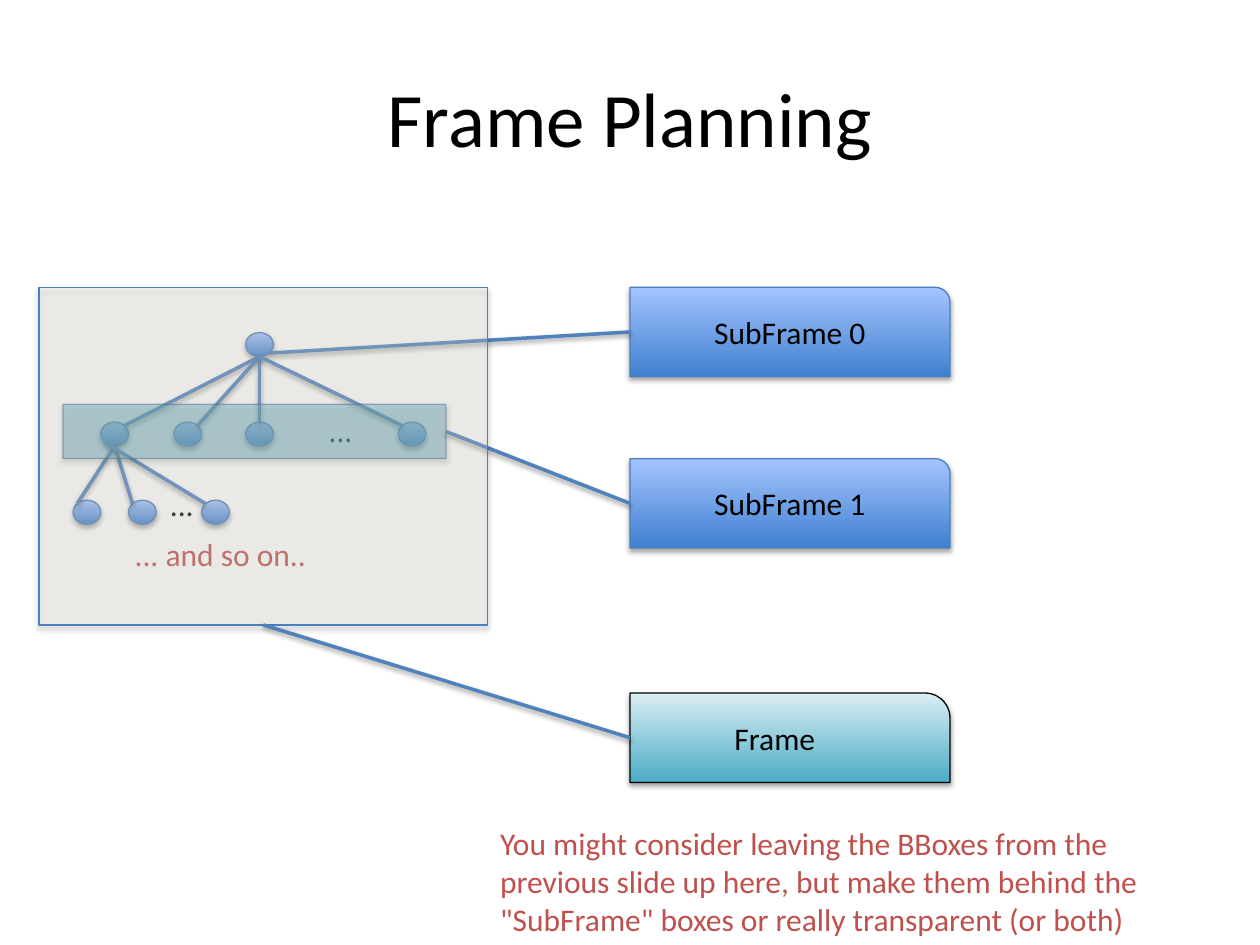
from collections import namedtuple
from math import sqrt

from lxml import etree
from pptx import Presentation
from pptx.dml.color import RGBColor
from pptx.enum.shapes import MSO_CONNECTOR, MSO_SHAPE
from pptx.enum.text import MSO_ANCHOR, MSO_AUTO_SIZE, PP_ALIGN
from pptx.oxml.ns import qn
from pptx.util import Inches, Pt

OVAL = MSO_SHAPE.OVAL
RECTANGLE = MSO_SHAPE.RECTANGLE
ROUND_CORNER = MSO_SHAPE.ROUND_1_RECTANGLE
STRAIGHT = MSO_CONNECTOR.STRAIGHT
MIDDLE = MSO_ANCHOR.MIDDLE
CENTER = PP_ALIGN.CENTER
GROW = MSO_AUTO_SIZE.SHAPE_TO_FIT_TEXT

COLUMNS, ROWS, CELL = 100, 75, 0.1
FONT = "Calibri"
BLACK, RED, EDGE, OUTLINE = "000000", "C0504D", "4F81BD", "4B7EBC"
BLUE_BLEND = ("3F80CE", "A4C4FF")
TEAL_BLEND = ("4BACC6", "DBEEF4")
NODE_WIDTH, NODE_HEIGHT = 2.2, 1.9
DIAGONAL = sqrt(0.5)
TOP, BOTTOM = (0, -1), (0, 1)
TOP_LEFT, TOP_RIGHT = (-DIAGONAL, -DIAGONAL), (DIAGONAL, -DIAGONAL)
BOTTOM_LEFT, BOTTOM_RIGHT = (-DIAGONAL, DIAGONAL), (DIAGONAL, DIAGONAL)

Box = namedtuple("Box", "left top width height")


def cells(*counts):
    return [Inches(count * CELL) for count in counts]


def color(value):
    return RGBColor.from_string(value)


def inside(box, left, top, width, height):
    return Box(box.left + left, box.top + top, width, height)


def site(box, direction):
    across, down = direction
    return (box.left + box.width * (1 + across) / 2,
            box.top + box.height * (1 + down) / 2)


def set_opacity(properties, route, percent):
    tint = properties.find(route + qn("a:solidFill") + "/" + qn("a:srgbClr"))
    etree.SubElement(tint, qn("a:alpha"), val=str(percent * 1000))


def add_shadow(properties, distance, percent):
    effects = etree.SubElement(properties, qn("a:effectLst"))
    shadow = etree.SubElement(effects, qn("a:outerShdw"), blurRad=str(Pt(3.1)),
                              dist=str(Pt(distance)), dir="5400000", rotWithShape="0")
    tint = etree.SubElement(shadow, qn("a:srgbClr"), val=BLACK)
    etree.SubElement(tint, qn("a:alpha"), val=str(percent * 1000))


def add_outlined(slide, kind, box, outline):
    shape = slide.shapes.add_shape(kind, *cells(*box))
    shape.line.color.rgb = color(outline)
    shape.line.width = Pt(0.75)
    return shape


def add_blended(slide, kind, box, blend, outline=OUTLINE):
    shape = add_outlined(slide, kind, box, outline)
    shape.fill.gradient()
    shape.fill.gradient_angle = 90
    for stop, position, tint in zip(shape.fill.gradient_stops, (0, 1), blend):
        stop.position = position
        stop.color.rgb = color(tint)
    add_shadow(shape._element.spPr, 1.8, 35)
    return shape


def add_veil(slide, box, tint, opacity, outline, outline_opacity=100):
    veil = add_outlined(slide, RECTANGLE, box, outline)
    veil.fill.solid()
    veil.fill.fore_color.rgb = color(tint)
    properties = veil._element.spPr
    set_opacity(properties, "", opacity)
    if outline_opacity < 100:
        set_opacity(properties, qn("a:ln") + "/", outline_opacity)
    add_shadow(properties, 1.8, 35)


def add_link(slide, start, end):
    link = slide.shapes.add_connector(STRAIGHT, *cells(*start, *end))
    link.line.color.rgb = color(EDGE)
    link.line.width = Pt(2)
    add_shadow(link._element.spPr, 1.6, 38)


def style(paragraph, size, tint):
    for run in paragraph.runs:
        run.font.name = FONT
        run.font.size = Pt(size)
        run.font.color.rgb = color(tint)


def add_label(slide, box, wording, tint=BLACK):
    frame = slide.shapes.add_textbox(*cells(*box)).text_frame
    frame.word_wrap = True
    frame.auto_size = GROW
    frame.text = wording
    style(frame.paragraphs[0], 18, tint)


def place_title(slide, box, wording):
    title = slide.shapes.title
    title.left, title.top, title.width, title.height = cells(*box)
    title.text_frame.text = wording
    title.text_frame.vertical_anchor = MIDDLE
    heading = title.text_frame.paragraphs[0]
    heading.alignment = CENTER
    style(heading, 44, BLACK)


def add_node(slide, box, center, middle):
    node = inside(box, center - NODE_WIDTH / 2, middle - NODE_HEIGHT / 2,
                  NODE_WIDTH, NODE_HEIGHT)
    add_blended(slide, OVAL, node, BLUE_BLEND)
    return node


def add_tree(slide, box):
    root = add_node(slide, box, 17.5, 4.55)
    children = [add_node(slide, box, x, 11.65) for x in (6, 11.8, 17.5, 29.6)]
    add_label(slide, inside(box, 22, 9.3, 5.3, 4), "...")
    grandchildren = [add_node(slide, box, x, 17.85) for x in (3.8, 8.2, 14)]
    for child, corner in zip(children, (TOP_RIGHT, TOP_RIGHT, TOP, TOP_LEFT)):
        add_link(slide, site(child, corner), site(root, BOTTOM))
    for grandchild, corner in zip(grandchildren, (BOTTOM, BOTTOM, BOTTOM_LEFT)):
        add_link(slide, site(grandchild, TOP_LEFT), site(children[0], corner))
    add_label(slide, inside(box, 9.4, 15.2, 5.3, 4), "...")
    add_label(slide, inside(box, 6.6, 19.2, 19, 4), "... and so on..", RED)
    return root


def add_card(slide, box, wording, indent, blend=BLUE_BLEND, outline=OUTLINE):
    card = add_blended(slide, ROUND_CORNER, box, blend, outline)
    add_label(slide, inside(box, indent, 1.55, box.width - 2 * indent + 1.3, 4), wording)
    return card


def main():
    deck = Presentation()
    deck.slide_width, deck.slide_height = cells(COLUMNS, ROWS)
    slide = deck.slides.add_slide(deck.slide_layouts[5])

    panel = Box(3.1, 22.8, 35.6, 26.8)
    level = inside(panel, 1.9, 9.3, 30.4, 4.3)
    first, second, whole = [Box(50, top, 25.4, 7.1) for top in (22.8, 36.4, 55)]
    left_side, right_side = (-1, 0), (1, 0)

    place_title(slide, Box(5, 3, 90, 12.5), "Frame Planning")
    add_label(slide, Box(38.7, 64.9, 53.2, 10.1),
              "You might consider leaving the BBoxes from the previous slide up here, "
              "but make them behind the \"SubFrame\" boxes or really transparent (or both)", RED)
    root = add_tree(slide, panel)
    add_card(slide, first, "SubFrame 0", 5.7)
    add_link(slide, site(root, BOTTOM_RIGHT), site(first, left_side))
    add_card(slide, second, "SubFrame 1", 5.7)
    add_veil(slide, level, "4BACC6", 41, "1F497D", 51)
    add_link(slide, site(level, right_side), site(second, left_side))
    add_veil(slide, panel, "EEECE1", 25, OUTLINE)
    frame_card = add_card(slide, whole, "Frame", 7.3, TEAL_BLEND, BLACK)
    frame_card.adjustments[0] = 0.28
    add_link(slide, site(panel, BOTTOM), site(whole, left_side))

    deck.save("out.pptx")


if __name__ == "__main__":
    main()
